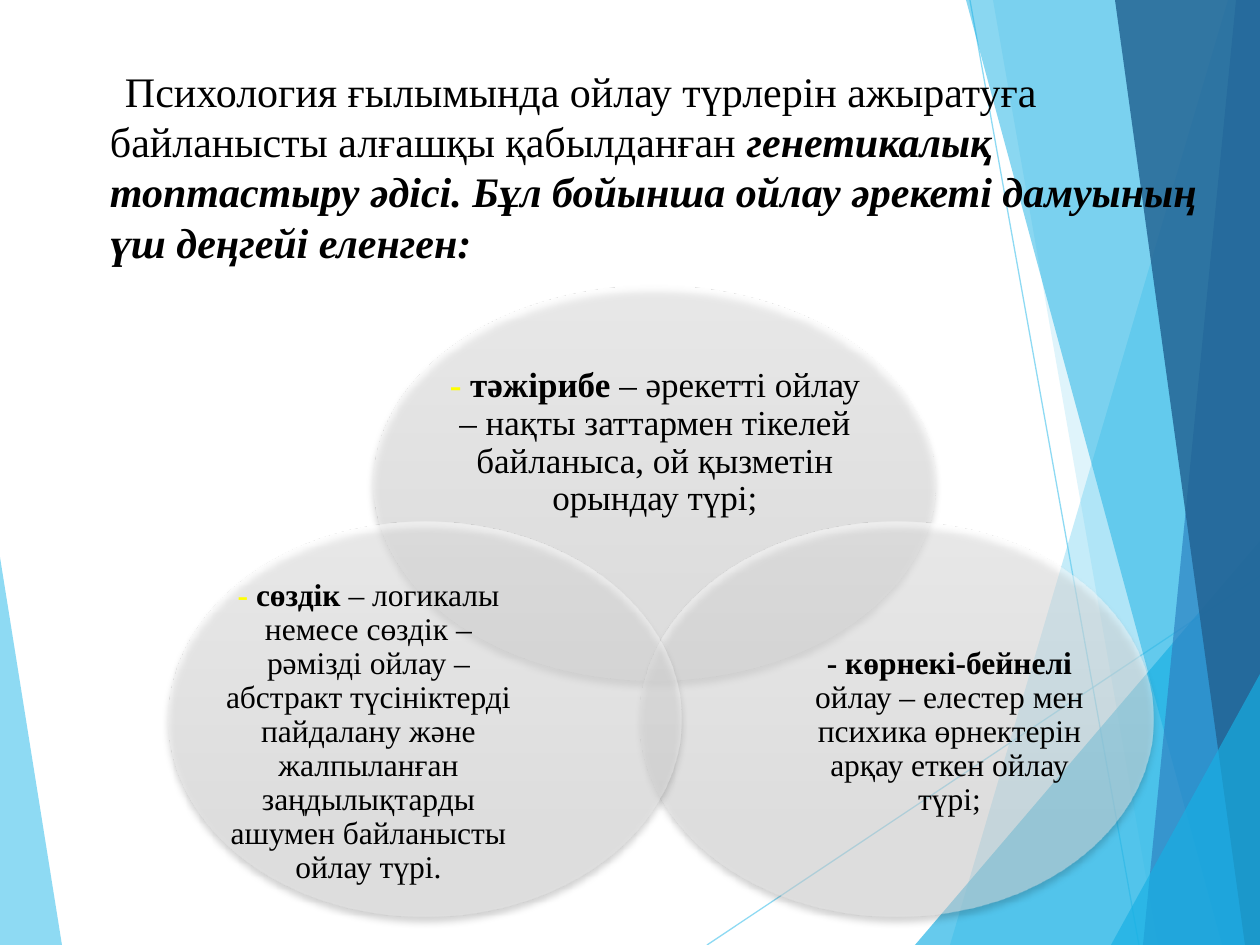
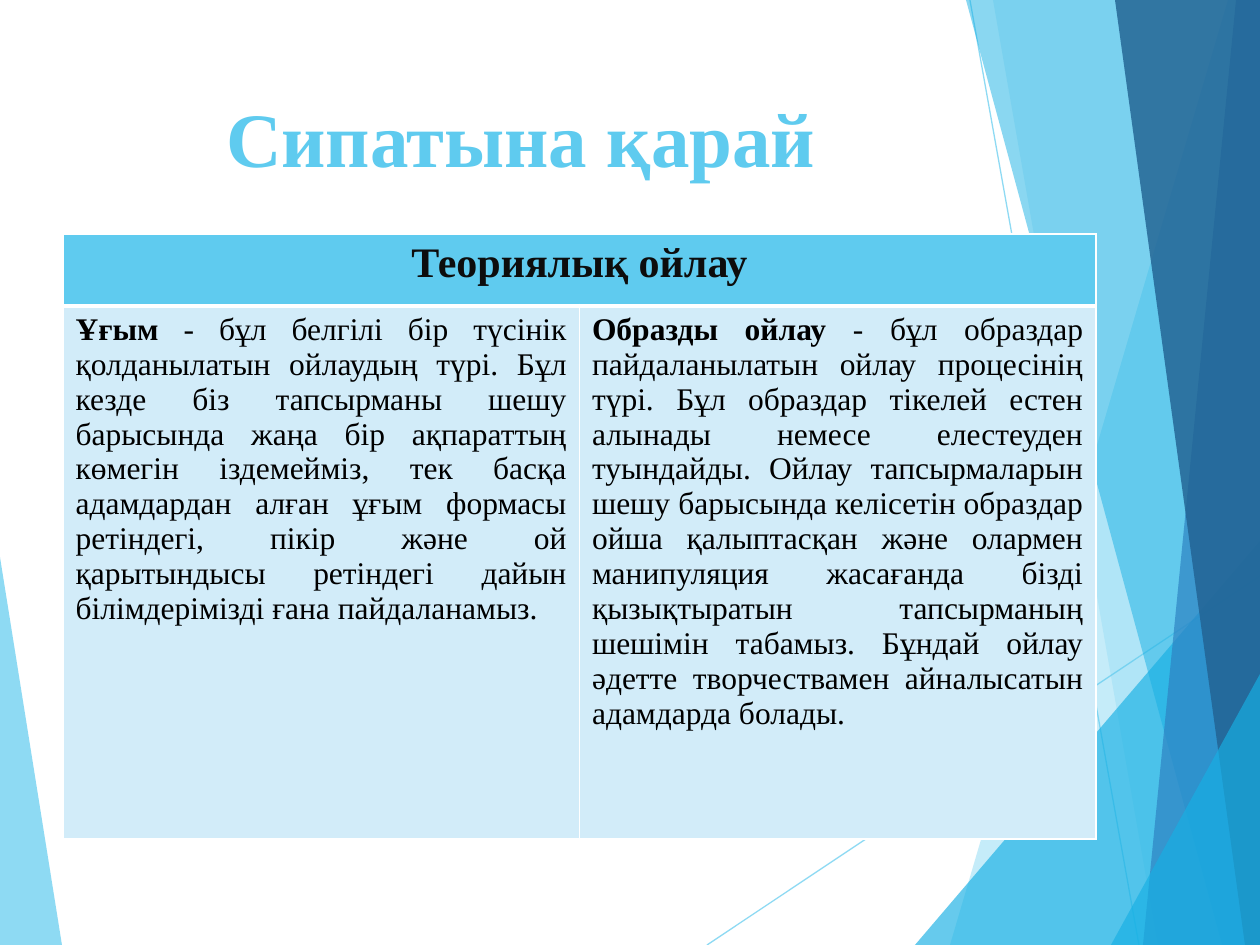
from lxml.etree import SubElement
from pptx import Presentation
from pptx.dml.color import RGBColor
from pptx.enum.shapes import MSO_CONNECTOR, MSO_SHAPE
from pptx.enum.text import MSO_ANCHOR, PP_ALIGN
from pptx.oxml import parse_xml
from pptx.oxml.ns import nsdecls, qn
from pptx.util import Pt

PX = 914400 / 126
W, H = 1260, 945
FONT = "Times New Roman"
SKY = RGBColor(0x5F, 0xCB, 0xEF)
AZURE = RGBColor(0x17, 0xB0, 0xE4)
BLUE = RGBColor(0x2E, 0x83, 0xC3)
NAVY = RGBColor(0x22, 0x62, 0x92)
PALE = RGBColor(0xD2, 0xEC, 0xF9)
WHITE = RGBColor(0xFF, 0xFF, 0xFF)
SILVER = RGBColor(0xE9, 0xE9, 0xE9)
YELLOW = RGBColor(0xFF, 0xFF, 0x00)
INK = RGBColor(0x0D, 0x0D, 0x0D)
BLACK = RGBColor(0, 0, 0)

FACETS = [
    ([(0, 557), (62, H), (0, H)], SKY, 70),
    ([(1228, 0), (950, H), (W, H), (W, 0)], SKY, 36),
    ([(993, 0), (1158, H), (W, H), (W, 0)], SKY, 20),
    ([(915, H), (W, 541), (W, H)], AZURE, 66),
    ([(966, 0), (1222, H), (W, H), (W, 0)], AZURE, 50),
    ([(1236, 0), (1143, H), (W, H), (W, 0)], BLUE, 70),
    ([(1115, 0), (1245, H), (W, H), (W, 0)], NAVY, 82),
    ([(1111, H), (W, 674), (W, H)], AZURE, 66),
]
RAYS = [(707, H, W, 576), (970, 0, 1139, H)]

INTRO = [
    ("Психология ғылымында ойлау түрлерін ажыратуға байланысты алғашқы қабылданған ", {}),
    ("генетикалық топтастыру әдісі. Бұл бойынша ойлау әрекеті дамуының үш деңгейі еленген:",
     {"bold": True, "italic": True}),
]
LEVELS = [
    ((374, 286, 561, 394), (449, 354, 412, 178), 20, [
        ("- ", {"bold": True, "color": YELLOW}),
        ("тәжірибе ", {"bold": True}),
        ("– әрекетті ойлау – нақты заттармен тікелей байланыса, ой қызметін орындау түрі;", {})]),
    ((640, 522, 513, 394), (796, 624, 307, 217), 18, [
        ("- көрнекі-бейнелі ", {"bold": True}),
        ("ойлау – елестер мен психика өрнектерін арқау еткен ойлау түрі;", {})]),
    ((168, 522, 513, 394), (215, 624, 307, 217), 18, [
        ("- ", {"bold": True, "color": YELLOW}),
        ("сөздік ", {"bold": True}),
        ("– логикалы немесе сөздік – рәмізді ойлау – абстракт түсініктерді пайдалану және "
         "жалпыланған заңдылықтарды ашумен байланысты ойлау түрі.", {})]),
]
THINKING_KINDS = [
    [("Ұғым", {"bold": True}),
     (" - бұл белгілі бір түсінік қолданылатын ойлаудың түрі. Бұл кезде біз тапсырманы шешу "
      "барысында жаңа бір ақпараттың көмегін іздемейміз, тек басқа адамдардан алған ұғым "
      "формасы ретіндегі, пікір және ой қарытындысы ретіндегі дайын білімдерімізді ғана "
      "пайдаланамыз.", {})],
    [("Образды ойлау ", {"bold": True}),
     ("- бұл образдар пайдаланылатын ойлау процесінің түрі. Бұл образдар тікелей естен алынады "
      "немесе елестеуден туындайды. Ойлау тапсырмаларын шешу барысында келісетін образдар "
      "ойша қалыптасқан және олармен манипуляция жасағанда бізді қызықтыратын тапсырманың "
      "шешімін табамыз. Бұндай ойлау әдетте творчествамен айналысатын адамдарда болады.", {})],
]


def px(*lengths):
    """Turn px lengths into EMU."""
    return [round(n * PX) for n in lengths]


def set_alpha(color_format_parent, percent):
    """Make every colour under an element partly opaque."""
    for clr in color_format_parent.iter(qn("a:srgbClr")):
        SubElement(clr, qn("a:alpha")).set("val", str(percent * 1000))


def write_runs(p, runs, size, align, spacing=None):
    """Fill a paragraph with styled runs."""
    p.alignment = align
    p.line_spacing = spacing
    for text, style in runs:
        r = p.add_run()
        r.text = text
        r.font.name = FONT
        r.font.size = Pt(size)
        r.font.bold = style.get("bold", False)
        r.font.italic = style.get("italic", False)
        r.font.color.rgb = style.get("color", BLACK)


def add_text(s, box, runs, size, align, spacing=None, anchor=MSO_ANCHOR.TOP, inset=(0, 0)):
    """Add a wrapping text box and return its paragraph."""
    tf = s.shapes.add_textbox(*px(*box)).text_frame
    tf.word_wrap = True
    tf.vertical_anchor = anchor
    tf.margin_left, tf.margin_top = tf.margin_right, tf.margin_bottom = px(*inset)
    write_runs(tf.paragraphs[0], runs, size, align, spacing)
    return tf.paragraphs[0]


def add_facet(s, points, color, opacity):
    """Add a translucent polygon."""
    builder = s.shapes.build_freeform(*points[0], scale=PX)
    builder.add_line_segments(points[1:], close=True)
    sp = builder.convert_to_shape()
    sp.shadow.inherit = False
    sp.fill.solid()
    sp.fill.fore_color.rgb = color
    sp.line.fill.background()
    set_alpha(sp._element.spPr, opacity)


def add_ray(s, ends):
    """Add a thin translucent line."""
    line = s.shapes.add_connector(MSO_CONNECTOR.STRAIGHT, *px(*ends))
    line.line.color.rgb = SKY
    line.line.width = Pt(0.75)
    set_alpha(line._element.spPr, 70)
    SubElement(line._element.spPr, qn("a:effectLst"))


def add_backdrop(s):
    """Draw the shared facets and rays."""
    strip, *panels = FACETS
    add_facet(s, *strip)
    for ends in RAYS:
        add_ray(s, ends)
    for panel in panels:
        add_facet(s, *panel)


def add_ellipse(s, box):
    """Add a translucent gradient ellipse with a soft shadow."""
    sp = s.shapes.add_shape(MSO_SHAPE.OVAL, *px(*box))
    sp.fill.gradient()
    sp.fill.gradient_angle = 270
    for stop, color, position in zip(sp.fill.gradient_stops, (WHITE, SILVER), (0, 0.78)):
        stop.color.rgb = color
        stop.position = position
    sp.line.fill.background()
    set_alpha(sp._element.spPr, 50)
    sp._element.spPr.append(parse_xml(
        f'<a:effectLst {nsdecls("a")}><a:outerShdw blurRad="{Pt(4)}" dist="{Pt(3)}" '
        'dir="5400000" rotWithShape="0"><a:srgbClr val="000000"><a:alpha val="35000"/>'
        '</a:srgbClr></a:outerShdw></a:effectLst>'))


def style_cell(cell, fill, bottom=1):
    """Fill a cell and give it white borders."""
    tc_pr = cell._tc.get_or_add_tcPr()
    for side, width in (("L", 1), ("R", 1), ("T", 1), ("B", bottom)):
        tc_pr.append(parse_xml(
            f'<a:ln{side} {nsdecls("a")} w="{Pt(width)}"><a:solidFill>'
            f'<a:srgbClr val="{WHITE}"/></a:solidFill></a:ln{side}>'))
    cell.fill.solid()
    cell.fill.fore_color.rgb = fill


def add_thinking_table(s):
    """Add the table with one merged header over two columns."""
    table = s.shapes.add_table(2, 2, *px(63, 234, 1033, 605)).table
    for row, height in zip(table.rows, px(72, 533)):
        row.height = height
    for cell in table.rows[0].cells:
        style_cell(cell, SKY, bottom=3)
    header = table.cell(0, 0)
    header.merge(table.cell(0, 1))
    write_runs(header.text_frame.paragraphs[0],
               [("Теориялық ойлау", {"bold": True, "color": INK})], 24, PP_ALIGN.CENTER)
    for cell, runs in zip(table.rows[1].cells, THINKING_KINDS):
        style_cell(cell, PALE)
        write_runs(cell.text_frame.paragraphs[0], runs, 18, PP_ALIGN.JUSTIFY)


def add_title(s, text):
    """Place and format the title placeholder."""
    title = s.shapes.title
    title.left, title.top, title.width, title.height = px(84, 84, 874, 181)
    tf = title.text_frame
    tf.vertical_anchor = MSO_ANCHOR.TOP
    write_runs(tf.paragraphs[0], [(text, {"bold": True, "color": SKY})], 44, PP_ALIGN.CENTER)


def build_levels(prs):
    """Build the slide with three overlapping levels of thinking."""
    s = prs.slides.add_slide(prs.slide_layouts[6])
    add_backdrop(s)
    p = add_text(s, (49, 59, 1182, 246), INTRO, 24, PP_ALIGN.LEFT, inset=(13, 6))
    margin, indent = px(48, 15)
    p._p.get_or_add_pPr().set("marL", str(margin))
    p._p.get_or_add_pPr().set("indent", str(indent))
    for ellipse, box, size, runs in LEVELS:
        add_ellipse(s, ellipse)
        add_text(s, box, runs, size, PP_ALIGN.CENTER, 0.9, MSO_ANCHOR.MIDDLE)


def build_character(prs):
    """Build the slide that compares kinds of theoretical thinking."""
    s = prs.slides.add_slide(prs.slide_layouts[5])
    add_backdrop(s)
    add_title(s, "Сипатына қарай")
    add_thinking_table(s)


def main():
    """Build and save the presentation."""
    prs = Presentation()
    prs.slide_width, prs.slide_height = px(W, H)
    build_levels(prs)
    build_character(prs)
    prs.save("out.pptx")


if __name__ == "__main__":
    main()
